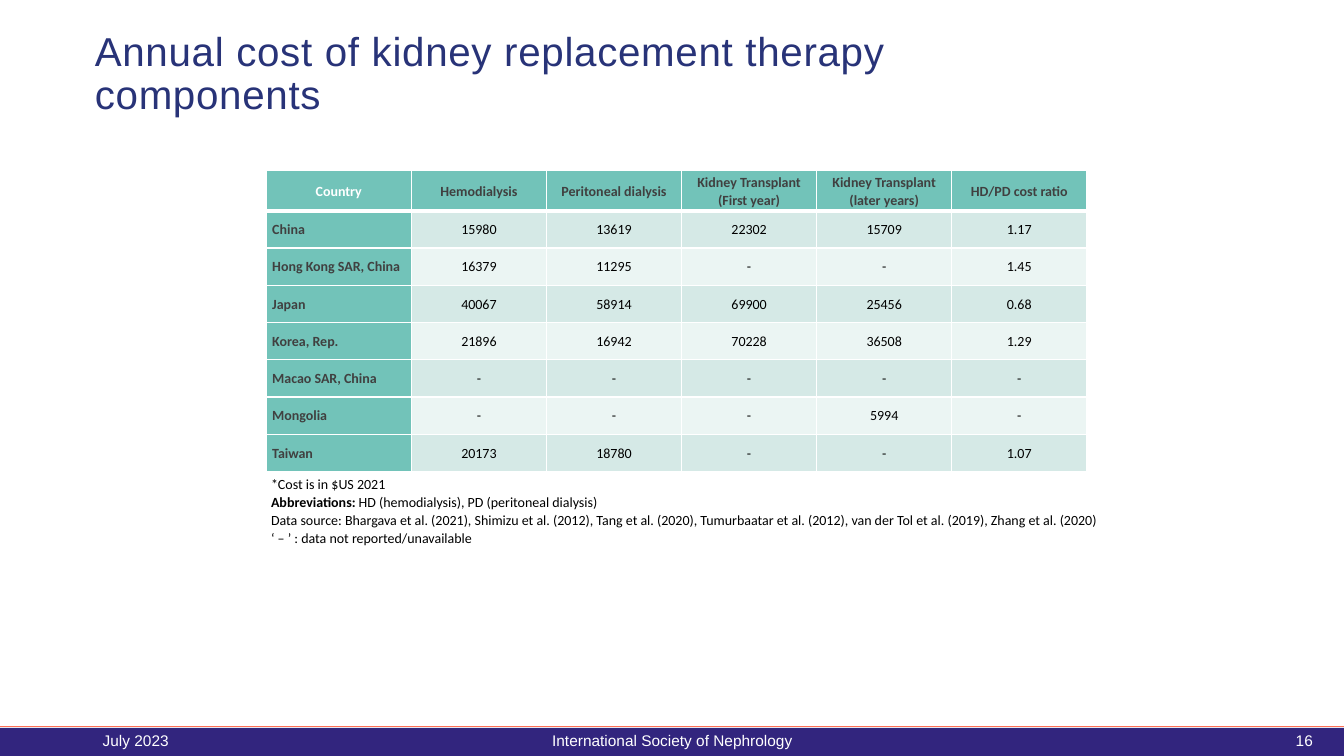
from lxml.etree import SubElement
from pptx import Presentation
from pptx.dml.color import RGBColor
from pptx.enum.shapes import MSO_CONNECTOR, MSO_SHAPE
from pptx.enum.text import MSO_ANCHOR, PP_ALIGN
from pptx.oxml import parse_xml
from pptx.oxml.ns import nsdecls, qn
from pptx.util import Inches, Pt

TEAL, WHITE, BLACK, GREY = "72C3B9", "FFFFFF", "000000", "404040"
BANDS = ("D5E9E6", "EBF5F3")

COSTS = [
    ("Country", "Hemodialysis", "Peritoneal dialysis", "Kidney Transplant\n(First year)",
     "Kidney Transplant\n(later years)", "HD/PD cost ratio"),
    ("China", "15980", "13619", "22302", "15709", "1.17"),
    ("Hong Kong SAR, China", "16379", "11295", "-", "-", "1.45"),
    ("Japan", "40067", "58914", "69900", "25456", "0.68"),
    ("Korea, Rep.", "21896", "16942", "70228", "36508", "1.29"),
    ("Macao SAR, China", "-", "-", "-", "-", "-"),
    ("Mongolia", "-", "-", "-", "5994", "-"),
    ("Taiwan", "20173", "18780", "-", "-", "1.07"),
]
NOTES = [
    ("", "*Cost is in $US 2021"),
    ("Abbreviations:", " HD (hemodialysis), PD (peritoneal dialysis)"),
    ("", "Data source: Bhargava et al. (2021), Shimizu et al. (2012), Tang et al. (2020), "
         "Tumurbaatar et al. (2012), van der Tol et al. (2019), Zhang et al. (2020)"),
    ("", "‘ – ’ : data not reported/unavailable"),
]


def rgb(color):
    return RGBColor.from_string(color)


def style(r, size, name, color, bold=False):
    r.font.size, r.font.name, r.font.bold = Pt(size), name, bold
    r.font.color.rgb = rgb(color)


def add_title(s, text):
    sp = s.shapes.title
    sp.left, sp.top, sp.width, sp.height = map(Inches, (0.84, 0.39, 9.26, 0.71))
    tf = sp.text_frame
    tf.text = text
    tf.word_wrap = True
    tf.vertical_anchor = MSO_ANCHOR.MIDDLE
    p = tf.paragraphs[0]
    p.alignment, p.line_spacing = PP_ALIGN.LEFT, 0.9
    r = p.runs[0]
    style(r, 28.8, "Arial", "283378")
    r.font._element.set("spc", "50")


def set_borders(cell, top, bottom):
    tcPr = cell._tc.get_or_add_tcPr()
    for i, (side, width) in enumerate(zip("LRTB", (1, 1, top, bottom))):
        ln = parse_xml(f'<a:ln{side} {nsdecls("a")} w="{Pt(width)}"><a:solidFill>'
                       f'<a:srgbClr val="{WHITE}"/></a:solidFill></a:ln{side}>')
        tcPr.insert(i, ln)


def fill_cell(cell, text, row, col):
    header, country = row == 0, col == 0
    label = header or country
    cell.text = text
    cell.vertical_anchor = MSO_ANCHOR.MIDDLE
    side = 0.03 if header else 0.06 if country else 0.01
    cell.margin_left = cell.margin_right = Inches(side)
    cell.margin_top = Inches(0 if country and not header else 0.01)
    cell.margin_bottom = 0
    cell.fill.solid()
    cell.fill.fore_color.rgb = rgb(TEAL if label else BANDS[(row - 1) % 2])
    color = WHITE if header and country else GREY if label else BLACK
    for p in cell.text_frame.paragraphs:
        p.alignment = PP_ALIGN.LEFT if country and not header else PP_ALIGN.CENTER
        if label:
            p.line_spacing = 1.06 if header else 1.07
        style(p.runs[0], 10, "Calibri", color, label)
    set_borders(cell, 3 if row == 1 else 1, 3 if header else 1)


def add_cost_table(s):
    table = s.shapes.add_table(len(COSTS), len(COSTS[0]), Inches(2.64), Inches(1.69),
                               Inches(8.15), Inches(2.97)).table
    for i, column in enumerate(table.columns):
        column.width = Inches(1.34 if i else 1.44)
    for i, row in enumerate(table.rows):
        row.height = Inches(0.37 if i else 0.4)
        for j, text in enumerate(COSTS[i]):
            fill_cell(table.cell(i, j), text, i, j)


def add_notes_below(s):
    tf = s.shapes.add_textbox(Inches(2.59), Inches(4.66), Inches(8.55), Inches(0.81)).text_frame
    tf.word_wrap = True
    for i, parts in enumerate(NOTES):
        p = tf.paragraphs[0] if i == 0 else tf.add_paragraph()
        p.line_spacing = 1.07
        for text, bold in zip(parts, (True, False)):
            if text:
                r = p.add_run()
                r.text = text
                style(r, 10, "Calibri", BLACK, bold)


def add_footer_bar(s, prs):
    bar = s.shapes.add_shape(MSO_SHAPE.RECTANGLE, 0, Inches(7.22), prs.slide_width, Inches(0.28))
    bar.shadow.inherit = False
    bar.fill.solid()
    bar.fill.fore_color.rgb = rgb("32257E")
    bar.line.fill.background()
    rule = s.shapes.add_connector(MSO_CONNECTOR.STRAIGHT, 0, Inches(7.21),
                                  prs.slide_width, Inches(7.21))
    rule.line.color.rgb = rgb("FE7055")
    rule.line.width = Pt(0.75)
    SubElement(rule._element.spPr, qn("a:effectLst"))


def add_footer_text(s, text, left, width, align):
    tf = s.shapes.add_textbox(Inches(left), Inches(7.15), Inches(width), Inches(0.4)).text_frame
    tf.text = text
    tf.word_wrap = True
    tf.vertical_anchor = MSO_ANCHOR.MIDDLE
    p = tf.paragraphs[0]
    p.alignment = align
    style(p.runs[0], 11, "Arial", WHITE)


def main():
    prs = Presentation()
    prs.slide_width, prs.slide_height = Inches(13.33), Inches(7.5)
    s = prs.slides.add_slide(prs.slide_layouts[5])

    # Footer band behind the content
    add_footer_bar(s, prs)

    # Title, table and its notes
    add_title(s, "Annual cost of kidney replacement therapy components")
    add_cost_table(s)
    add_notes_below(s)

    # Footer texts
    add_footer_text(s, "July 2023", 0.92, 3, PP_ALIGN.LEFT)
    add_footer_text(s, "International Society of Nephrology", 4.42, 4.5, PP_ALIGN.CENTER)
    add_footer_text(s, "16", 9.42, 3.7, PP_ALIGN.RIGHT)

    prs.save("out.pptx")


if __name__ == "__main__":
    main()
